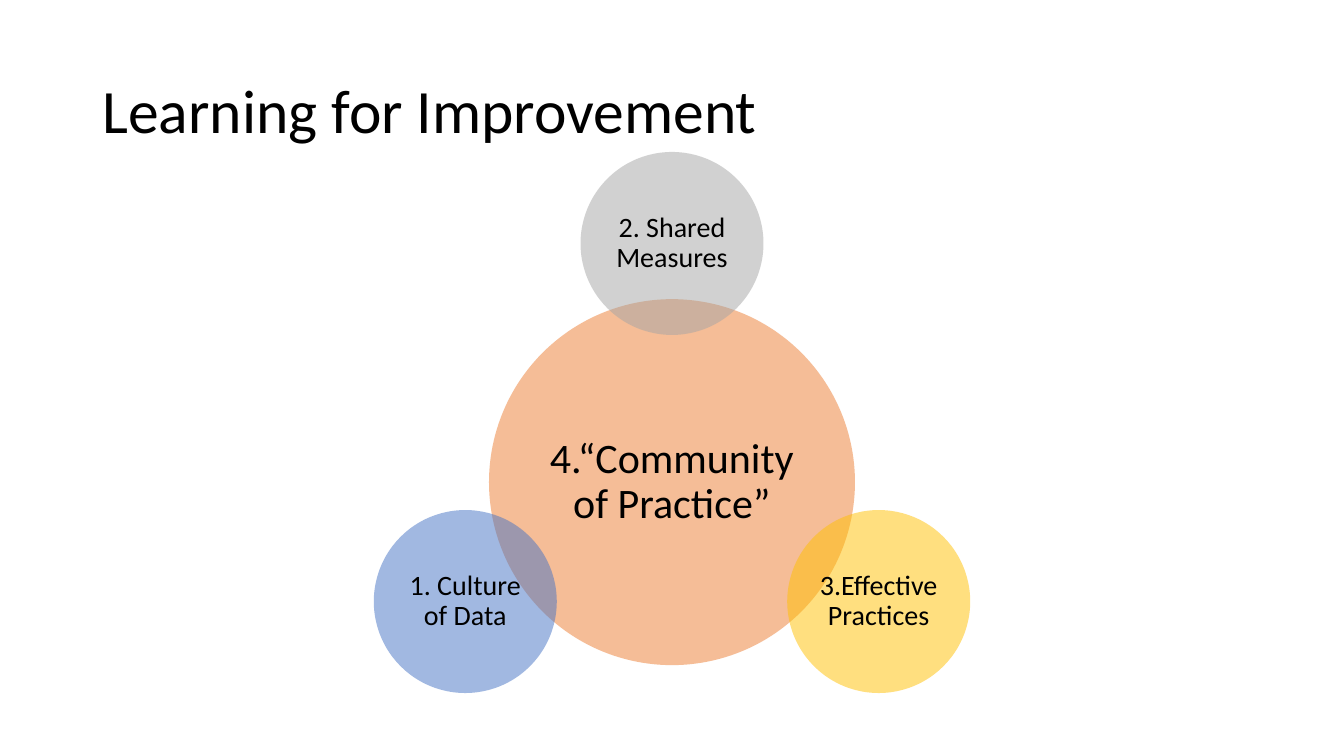
import math
from lxml import etree
from pptx import Presentation
from pptx.dml.color import RGBColor
from pptx.enum.shapes import MSO_SHAPE
from pptx.enum.text import MSO_ANCHOR, MSO_AUTO_SIZE, PP_ALIGN
from pptx.oxml.ns import qn
from pptx.util import Pt

OVAL = MSO_SHAPE.OVAL
MIDDLE = MSO_ANCHOR.MIDDLE
NO_FIT = MSO_AUTO_SIZE.NONE
LEFT, CENTER = PP_ALIGN.LEFT, PP_ALIGN.CENTER

COLORS = {
    "text": "000000",
    "community": "ED7D31",
    "measures": "A5A5A5",
    "practices": "FFC000",
    "culture": "4472C4",
}


def write_text(sp, text, size, align, margins):
    tf = sp.text_frame
    frame_format = {"word_wrap": True, "auto_size": NO_FIT, "vertical_anchor": MIDDLE}
    for name, value in {**frame_format, **margins}.items():
        setattr(tf, name, value)
    p = tf.paragraphs[0]
    p.alignment = align
    p.line_spacing = 0.9
    r = p.add_run()
    r.text = text
    for name, value in {"name": "Calibri", "size": Pt(size), "bold": False}.items():
        setattr(r.font, name, value)
    r.font.color.rgb = RGBColor.from_string(COLORS["text"])


prs = Presentation()
prs.slide_width, prs.slide_height = Pt(960), Pt(540)
s = prs.slides.add_slide(prs.slide_layouts[5])

title = s.shapes.title
title_box = {"left": 66, "top": 28.75, "width": 828, "height": 104.4}
for name, value in title_box.items():
    setattr(title, name, Pt(value))
write_text(title, "Learning for Improvement", 44, LEFT, {})

center_x, center_y = 480, 344.4
orbit = 170.5
big, small = 261.4, 130.7

circles = [
    ("4.“Community of Practice”", "community", big, 0, 0, 30, 3),
    ("2. Shared Measures", "measures", small, orbit, -90, 20, 2),
    ("3.Effective Practices", "practices", small, orbit, 30, 20, 2),
    ("1. Culture of Data", "culture", small, orbit, 150, 20, 2),
]

diagram = s.shapes.add_group_shape()
for text, color, diameter, distance, angle, size, inset in circles:
    x = center_x + distance * math.cos(math.radians(angle)) - diameter / 2
    y = center_y + distance * math.sin(math.radians(angle)) - diameter / 2
    sp = diagram.shapes.add_shape(OVAL, Pt(x), Pt(y), Pt(diameter), Pt(diameter))
    sp.shadow.inherit = False
    sp.line.fill.background()
    sp.fill.solid()
    sp.fill.fore_color.rgb = RGBColor.from_string(COLORS[color])
    rgb = sp.fill._xPr.find(qn("a:solidFill")).find(qn("a:srgbClr"))
    etree.SubElement(rgb, qn("a:alpha"), val="50000")
    sides = ("left", "top", "right", "bottom")
    write_text(sp, text, size, CENTER, {f"margin_{side}": Pt(inset) for side in sides})

prs.save("out.pptx")
